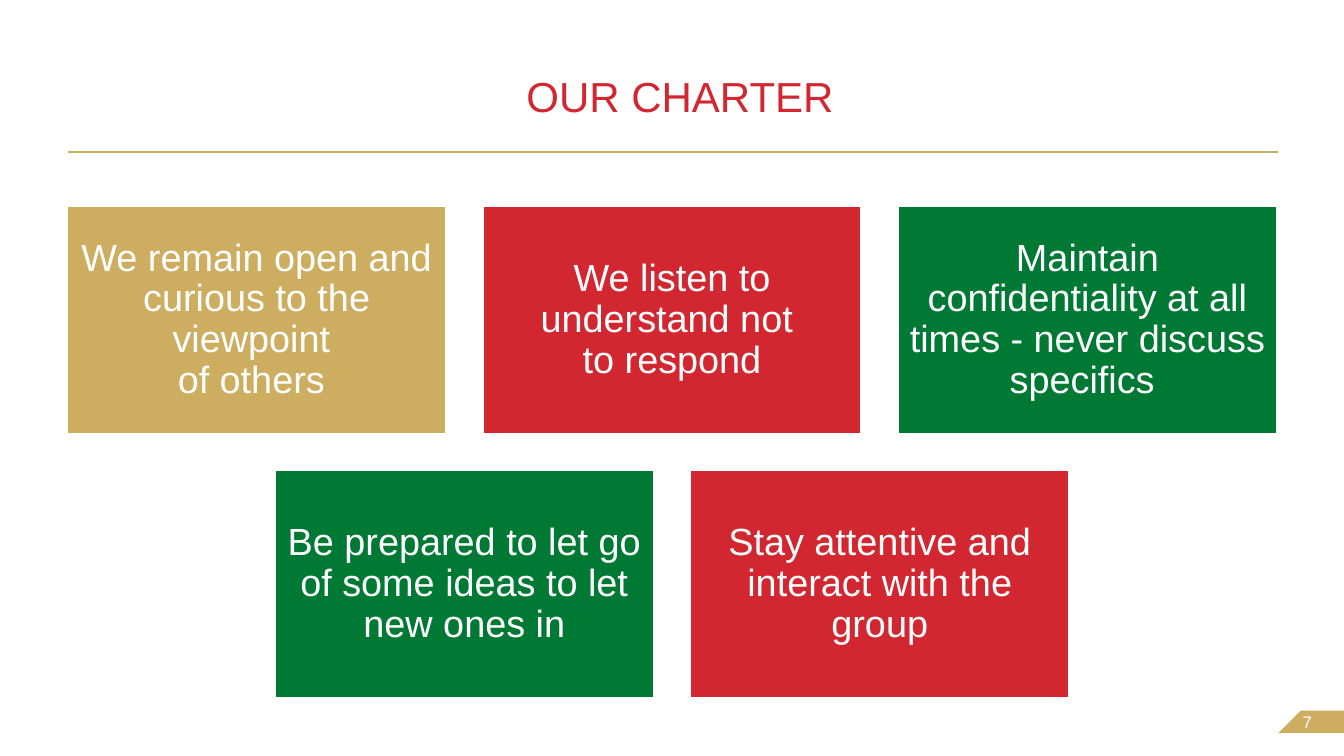
import pptx
import pptx.util
import pptx.dml.color
import pptx.enum.shapes
import pptx.enum.text
import lxml.etree

Inches = pptx.util.Inches
RGBColor = pptx.dml.color.RGBColor
Align = pptx.enum.text.PP_ALIGN
Anchor = pptx.enum.text.MSO_ANCHOR

GOLD = RGBColor(0xCD, 0xAD, 0x5F)
RED = RGBColor(0xD2, 0x27, 0x30)
GREEN = RGBColor(0x00, 0x79, 0x34)
WHITE = RGBColor(0xFF, 0xFF, 0xFF)


def write_text(shape, text, size, color, frame_format, para_format):
    frame = shape.text_frame
    for name, value in frame_format.items():
        setattr(frame, name, value)
    para = frame.paragraphs[0]
    para.text = text
    for name, value in para_format.items():
        setattr(para, name, value)
    for span in para.runs:
        span.font.name = "Arial"
        span.font.size = pptx.util.Pt(size)
        span.font.color.rgb = color


deck = pptx.Presentation()
deck.slide_width = Inches(13.33)
deck.slide_height = Inches(7.5)
slide = deck.slides.add_slide(deck.slide_layouts[6])

rule = slide.shapes.add_connector(
    pptx.enum.shapes.MSO_CONNECTOR.STRAIGHT,
    Inches(0.67), Inches(1.51), Inches(12.68), Inches(1.51))
rule.line.color.rgb = GOLD
rule.line.width = pptx.util.Pt(1)
lxml.etree.SubElement(
    rule._element.spPr,
    "{http://schemas.openxmlformats.org/drawingml/2006/main}effectLst")

margins = ["margin_left", "margin_top", "margin_right", "margin_bottom"]
no_margins = dict.fromkeys(margins, 0)
card_frame = {**dict.fromkeys(margins, Inches(0.11)),
              "word_wrap": True, "vertical_anchor": Anchor.MIDDLE}
card_para = {"alignment": Align.CENTER, "line_spacing": 0.9}

card_width, card_height, card_pitch = 3.75, 2.25, 4.12
card_rows = [
    (0.67, 2.05, [
        ("We remain open and curious to the viewpoint \vof others ", GOLD),
        ("We listen to understand not \vto respond", RED),
        ("Maintain confidentiality at all times - never discuss specifics ", GREEN),
    ]),
    (2.73, 4.67, [
        ("Be prepared to let go of some ideas to let new ones in", GREEN),
        ("Stay attentive and interact with the group", RED),
    ]),
]
for row_left, row_top, cards in card_rows:
    for column, (text, color) in enumerate(cards):
        card = slide.shapes.add_shape(
            pptx.enum.shapes.MSO_SHAPE.RECTANGLE,
            Inches(row_left + column * card_pitch), Inches(row_top),
            Inches(card_width), Inches(card_height))
        card.shadow.inherit = False
        card.fill.solid()
        card.fill.fore_color.rgb = color
        card.line.color.rgb = WHITE
        card.line.width = pptx.util.Pt(1)
        write_text(card, text, 27, WHITE, card_frame, card_para)

builder = slide.shapes.build_freeform(Inches(12.9), Inches(7.05))
builder.add_line_segments(
    [(Inches(x), Inches(y)) for x, y in [(13.33, 7.05), (13.33, 7.27), (12.68, 7.27)]],
    close=True)
page_tab = builder.convert_to_shape()
page_tab.shadow.inherit = False
page_tab.fill.solid()
page_tab.fill.fore_color.rgb = GOLD
page_tab.line.fill.background()
write_text(page_tab, "7", 12, WHITE,
           {**no_margins, "margin_left": Inches(0.24), "word_wrap": True,
            "vertical_anchor": Anchor.MIDDLE},
           {"alignment": Align.LEFT})

title = slide.shapes.add_textbox(Inches(1.42), Inches(0.33), Inches(10.65), Inches(0.87))
write_text(title, "OUR CHARTER", 30, RED,
           {**no_margins, "word_wrap": True, "vertical_anchor": Anchor.BOTTOM},
           {"alignment": Align.CENTER, "line_spacing": 0.8})

deck.save("out.pptx")
